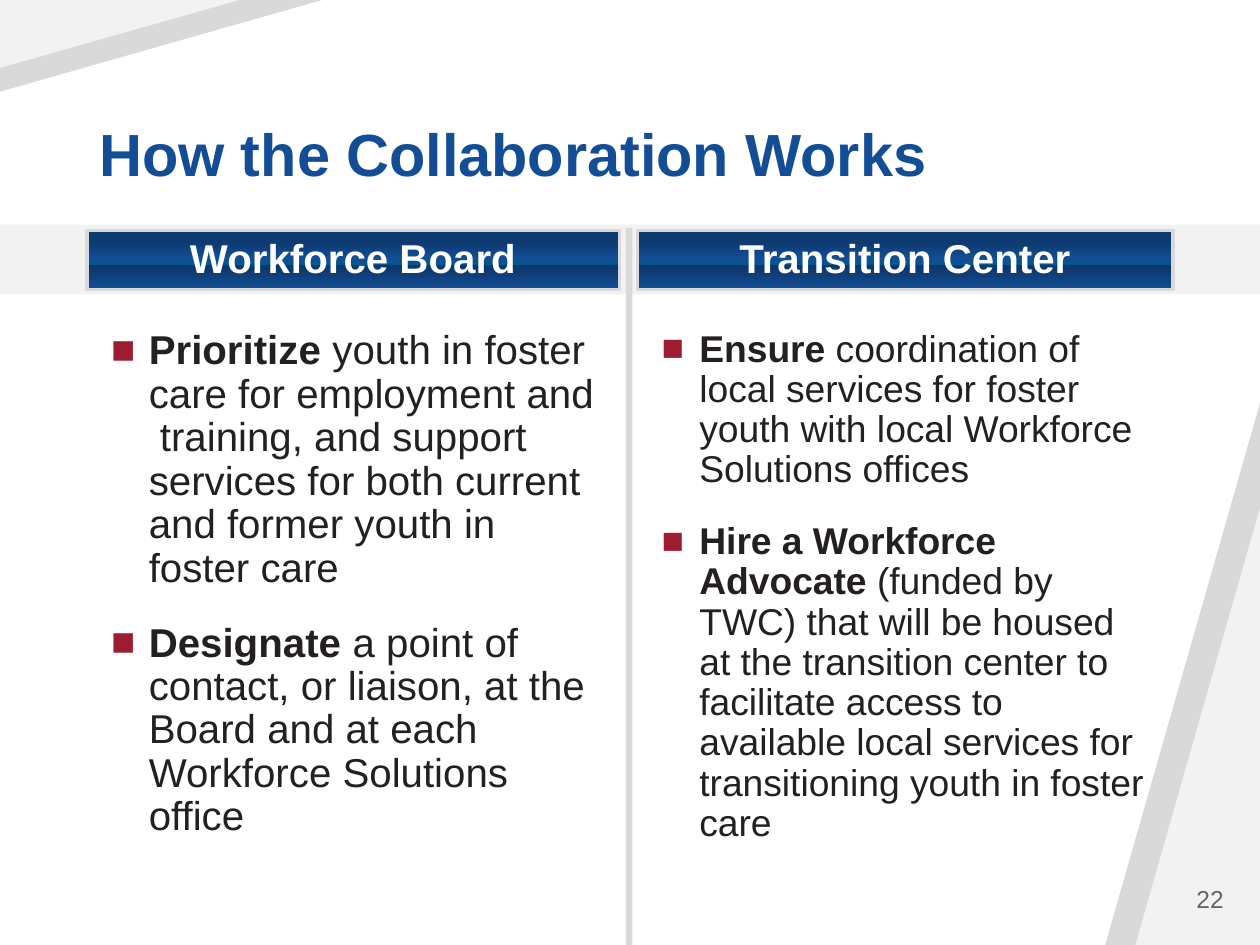
"""Build the slide on how the board and the transition center collaborate."""
from lxml import etree
from pptx import Presentation
from pptx.dml.color import RGBColor
from pptx.enum.shapes import MSO_SHAPE
from pptx.enum.text import MSO_ANCHOR, PP_ALIGN
from pptx.oxml.ns import qn
from pptx.util import Cm, Pt

TRIANGLE, RECTANGLE = MSO_SHAPE.ISOSCELES_TRIANGLE, MSO_SHAPE.RECTANGLE
TOP, MIDDLE, BOTTOM = MSO_ANCHOR.TOP, MSO_ANCHOR.MIDDLE, MSO_ANCHOR.BOTTOM
LEFT, CENTER, RIGHT = PP_ALIGN.LEFT, PP_ALIGN.CENTER, PP_ALIGN.RIGHT

WIDTH, HEIGHT = 25.4, 19.05
FONT = "Arial"
GREY, PALE, BLUE, INK = "D9D9D9", "F2F2F2", "124D95", "242021"
WHITE, BULLET_RED, NUMBER_GREY = "FFFFFF", "9E1C30", "646464"
HEADER_STOPS = [(19, "0D3A70"), (47, BLUE), (58, "00588F"), (59, "0D3668"), (100, BLUE)]

TITLE = "How the Collaboration Works"
PAGE = "22"
COLUMNS = [
    {"heading": "Workforce Board", "left": 1.75, "width": 10.74, "size": 23, "duties": [
        ("Prioritize", " youth in foster care for employment and  training, and support "
                       "services for both current and former youth in foster care"),
        ("Designate", " a point of contact, or liaison, at the Board and at each "
                      "Workforce Solutions office"),
    ]},
    {"heading": "Transition Center", "left": 12.85, "width": 10.8, "size": 21.3, "duties": [
        ("Ensure", " coordination of local services for foster youth with local "
                   "Workforce Solutions offices"),
        ("Hire a Workforce Advocate ", "(funded by TWC) that will be housed at the transition "
                                       "center to facilitate access to available local services "
                                       "for transitioning youth in foster care"),
    ]},
]
SIDE_WEDGES = [(3.12, 10.92, GREY), (2.51, 8.81, PALE)]
CORNER_WEDGES = [(1.85, 6.5, GREY), (1.37, 4.83, PALE)]


def rgb(code):
    return RGBColor.from_string(code)


def add_block(slide, kind, box, color):
    block = slide.shapes.add_shape(kind, *map(Cm, box))
    block.shadow.inherit = False
    block.fill.solid()
    block.fill.fore_color.rgb = rgb(color)
    block.line.fill.background()
    return block


def add_wedge(slide, box, color):
    wedge = add_block(slide, TRIANGLE, box, color)
    wedge.adjustments[0] = 1
    return wedge


def add_text_box(slide, box, anchor):
    frame = slide.shapes.add_textbox(*map(Cm, box)).text_frame
    frame.word_wrap = True
    frame.vertical_anchor = anchor
    return frame


def add_run(paragraph, words, size, color, bold=False):
    run = paragraph.add_run()
    run.text = words
    run.font.name, run.font.size, run.font.bold = FONT, Pt(size), bold
    run.font.color.rgb = rgb(color)


def write_line(frame, words, size, color, align, bold=False):
    line = frame.paragraphs[0]
    line.alignment = align
    line.line_spacing = 0.9
    add_run(line, words, size, color, bold)


def add_bullet(paragraph):
    props = paragraph._p.get_or_add_pPr()
    props.set("marL", str(Cm(0.76)))
    props.set("indent", str(Cm(-0.76)))
    tint = etree.SubElement(props, qn("a:buClr"))
    etree.SubElement(tint, qn("a:srgbClr"), val=BULLET_RED)
    etree.SubElement(props, qn("a:buFont"), typeface=FONT)
    etree.SubElement(props, qn("a:buChar"), char="■")


def fill_gradient(shape, stops):
    shape.fill.gradient()
    shape.fill.gradient_angle = 270
    stop_list = shape._element.spPr.find(qn("a:gradFill")).find(qn("a:gsLst"))
    for old_stop in list(stop_list):
        stop_list.remove(old_stop)
    for percent, color in stops:
        stop = etree.SubElement(stop_list, qn("a:gs"), pos=str(percent * 1000))
        etree.SubElement(stop, qn("a:srgbClr"), val=color)


def add_header(slide, heading, left, width):
    header = add_block(slide, RECTANGLE, (left, 4.65, width, 1.19), BLUE)
    fill_gradient(header, HEADER_STOPS)
    header.line.color.rgb = rgb(GREY)
    header.line.width = Pt(2)
    frame = header.text_frame
    frame.word_wrap = True
    frame.vertical_anchor = MIDDLE
    frame.margin_left = frame.margin_right = Cm(0.13)
    frame.margin_top = frame.margin_bottom = Cm(0.15)
    write_line(frame, heading, 23, WHITE, CENTER, True)


def add_duties(slide, duties, left, size):
    frame = add_text_box(slide, (left, 6.53, 10.41, 10.67), TOP)
    for index, (lead, rest) in enumerate(duties):
        duty = frame.add_paragraph() if index else frame.paragraphs[0]
        add_bullet(duty)
        duty.alignment = LEFT
        duty.line_spacing = 0.9
        if index:
            duty.space_before = Pt(18)
        add_run(duty, lead, size, INK, True)
        add_run(duty, rest, size, INK)


def add_backdrop(slide):
    for width, height, color in SIDE_WEDGES:
        add_wedge(slide, (WIDTH - width, HEIGHT - height, width, height), color)
    for depth, length, color in CORNER_WEDGES:
        shift = (length - depth) / 2
        corner = add_wedge(slide, (shift, -shift, depth, length), color)
        corner.rotation = 270
        corner._element.spPr.xfrm.set("flipV", "1")
    add_block(slide, RECTANGLE, (0, 4.53, WIDTH, 1.4), PALE)
    add_block(slide, RECTANGLE, (12.62, 4.6, 0.13, HEIGHT - 4.6), GREY)


def main():
    deck = Presentation()
    deck.slide_width, deck.slide_height = Cm(WIDTH), Cm(HEIGHT)
    slide = deck.slides.add_slide(deck.slide_layouts[6])
    add_backdrop(slide)
    title = add_text_box(slide, (1.75, 1.02, 21.89, 2.92), BOTTOM)
    write_line(title, TITLE, 34, BLUE, LEFT, True)
    for column in COLUMNS:
        add_header(slide, column["heading"], column["left"], column["width"])
        add_duties(slide, column["duties"], column["left"] + 0.24, column["size"])
    page = add_text_box(slide, (21.36, 17.65, 3.56, 1.02), MIDDLE)
    write_line(page, PAGE, 14, NUMBER_GREY, RIGHT)
    deck.save("out.pptx")


if __name__ == "__main__":
    main()
